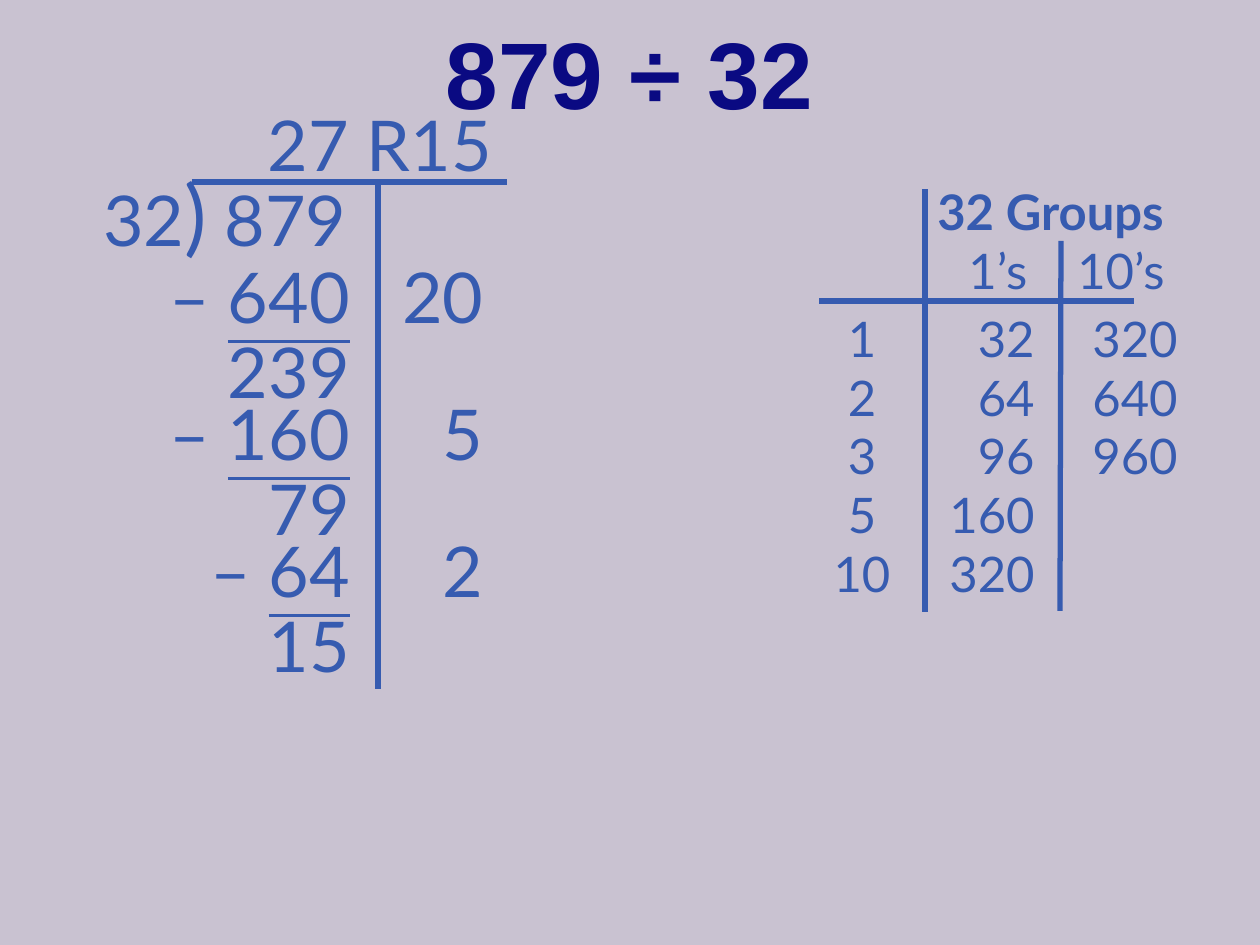
from lxml import etree
from pptx import Presentation
from pptx import util as u
from pptx.dml.color import RGBColor
from pptx.enum import shapes, text
from pptx.oxml.ns import qn

BACKGROUND = RGBColor(0xC9, 0xC2, 0xD1)
NAVY = RGBColor(0x0A, 0x0A, 0x82)
BLUE = RGBColor(0x36, 0x5B, 0xB0)
LEFT, CENTER, RIGHT = text.PP_ALIGN.LEFT, text.PP_ALIGN.CENTER, text.PP_ALIGN.RIGHT


def px(n):
    return u.Emu(round(n * 914400 / 126))


def style(r, size, color=BLUE, font="Lato", bold=False):
    r.font.size = u.Pt(size)
    r.font.name = font
    r.font.bold = bold
    r.font.color.rgb = color


def add_text(s, x, y, w, h, lines, size, align=LEFT, bold=False):
    sp = s.shapes.add_textbox(px(x), px(y), px(w), px(h))
    tf = sp.text_frame
    tf.word_wrap = True
    tf.auto_size = text.MSO_AUTO_SIZE.SHAPE_TO_FIT_TEXT
    tf.text = "\n".join(lines)
    for p in tf.paragraphs:
        p.alignment = align
        for r in p.runs:
            style(r, size, bold=bold)
    return tf.paragraphs[0]


def add_run(p, words, size):
    r = p.add_run()
    r.text = words
    style(r, size)
    return r


def add_line(s, x1, y1, x2, y2):
    line = s.shapes.add_connector(shapes.MSO_CONNECTOR.STRAIGHT, px(x1), px(y1), px(x2), px(y2))
    line.line.color.rgb = BLUE
    line.line.width = u.Pt(3)
    etree.SubElement(line._element.spPr, qn("a:effectLst"))


def title(s, x, y, w, h):
    sp = s.shapes.title
    sp.left, sp.top, sp.width, sp.height = px(x), px(y), px(w), px(h)
    tf = sp.text_frame
    tf.text = "879 ÷ 32"
    tf.auto_size = text.MSO_AUTO_SIZE.NONE
    tf.vertical_anchor = text.MSO_ANCHOR.MIDDLE
    p = tf.paragraphs[0]
    p.alignment = CENTER
    style(p.runs[0], 54, NAVY, "Arial", True)


def long_division(s, x, y):
    p = add_text(s, x, y + 61, 305, 115, [" 32"], 40)
    add_run(p, ")", 48)
    add_run(p, " 879", 40)
    add_line(s, x + 119, y + 87, x + 434, y + 87)
    add_line(s, x + 305, y + 594, x + 305, y + 87)
    add_text(s, x + 161, y, 270, 97, ["27 R15"], 40, RIGHT)

    steps = [("640", "20", "239"), ("160", "5", "79"), ("64", "2", "15")]
    for i, (product, quotient, remainder) in enumerate(steps):
        top = y + 152 + 137 * i
        p = add_text(s, x + 76, top, 213, 97, ["– "], 40, RIGHT)
        add_run(p, product, 40).font.underline = True
        add_text(s, x + 307, top, 116, 97, [quotient], 40, RIGHT)
        add_text(s, x + 76, top + 75, 213, 97, [remainder], 40, RIGHT)


def groups_table(s, x, y):
    add_text(s, x + 126, y, 329, 72, ["32 Groups"], 28, bold=True)
    add_text(s, x + 157, y + 59, 104, 72, ["1’s"], 28)
    add_text(s, x + 266, y + 59, 138, 72, ["10’s"], 28)
    columns = [
        (0, 126, CENTER, ["1", "2", "3", "5", "10"]),
        (122, 126, RIGHT, ["32", "64", "96", "160", "320"]),
        (251, 140, RIGHT, ["320", "640", "960"]),
    ]
    for left, width, align, values in columns:
        add_text(s, x + left, y + 127, width, 310, values, 28, align)
    add_line(s, x + 20, y + 126, x + 335, y + 126)
    add_line(s, x + 126, y + 437, x + 126, y + 14)
    add_line(s, x + 261, y + 436, x + 262, y + 66)


def main():
    prs = Presentation()
    prs.slide_width, prs.slide_height = px(1260), px(945)
    s = prs.slides.add_slide(prs.slide_layouts[5])
    s.background.fill.solid()
    s.background.fill.fore_color.rgb = BACKGROUND
    title(s, 78, 4, 1103, 136)
    long_division(s, 73, 95)
    groups_table(s, 799, 175)
    prs.save("out.pptx")


if __name__ == "__main__":
    main()
